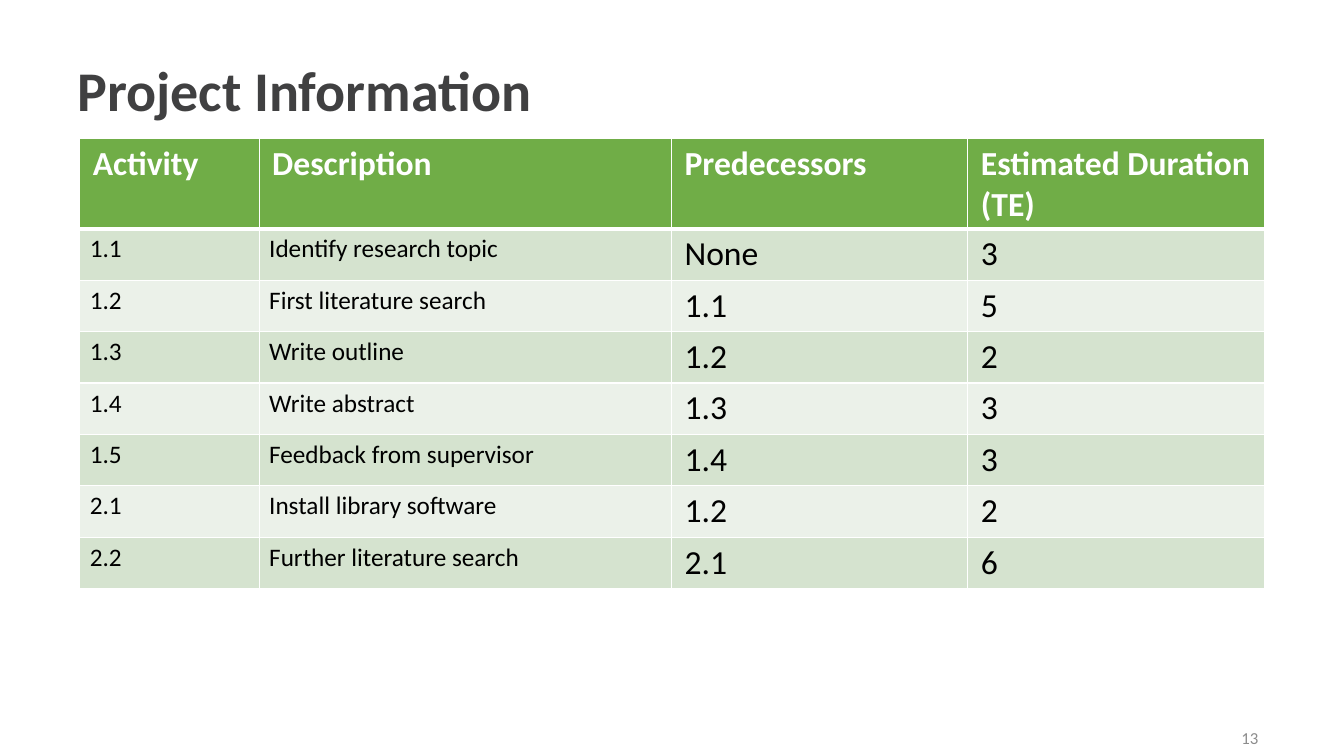
import pptx
import pptx.dml.color
import pptx.enum.text
import pptx.util
from lxml import etree

Inches = pptx.util.Inches
DRAWING = "http://schemas.openxmlformats.org/drawingml/2006/main"

deck = pptx.Presentation()
deck.slide_width, deck.slide_height = Inches(13.33), Inches(7.5)
page = deck.slides.add_slide(deck.slide_layouts[6])


def write(frame, text, size, color, bold=False):
    frame.word_wrap = True
    frame.text = text
    para = frame.paragraphs[0]
    for span in para.runs:
        span.font.name = "Calibri"
        span.font.size = pptx.util.Pt(size)
        span.font.bold = bold
        span.font.color.rgb = pptx.dml.color.RGBColor.from_string(color)
    return para


def add_borders(cell, widths):
    """Draw white borders; widths maps the sides L, R, T, B to points."""
    properties = cell._tc.get_or_add_tcPr()
    for position, side in enumerate("LRTB"):
        line = etree.Element(f"{{{DRAWING}}}ln{side}", w=str(pptx.util.Pt(widths[side])))
        fill = etree.SubElement(line, f"{{{DRAWING}}}solidFill")
        etree.SubElement(fill, f"{{{DRAWING}}}srgbClr", val="FFFFFF")
        properties.insert(position, line)


# Title and page number
title = page.shapes.add_textbox(Inches(0.67), Inches(0.3), Inches(12), Inches(1.25))
para = write(title.text_frame, "Project Information", 40, "404041", True)
para.line_spacing = 0.9
number = page.shapes.add_textbox(Inches(9.58), Inches(7.12), Inches(3), Inches(0.4))
para = write(number.text_frame, "13", 12, "8C8C8C")
para.alignment = pptx.enum.text.PP_ALIGN.RIGHT
for box in (title, number):
    box.text_frame.vertical_anchor = pptx.enum.text.MSO_ANCHOR.MIDDLE

# Activity table
activities = [
    ("Activity", "Description", "Predecessors", "Estimated Duration (TE)"),
    ("1.1", "Identify research topic", "None", "3"),
    ("1.2", "First literature search", "1.1", "5"),
    ("1.3", "Write outline", "1.2", "2"),
    ("1.4", "Write abstract", "1.3", "3"),
    ("1.5", "Feedback from supervisor", "1.4", "3"),
    ("2.1", "Install library software", "1.2", "2"),
    ("2.2", "Further literature search", "2.1", "6"),
]
column_widths = [1.78, 4.09, 2.94, 2.94]
row_heights = [0.88] + [0.51] * (len(activities) - 1)
table = page.shapes.add_table(
    len(activities), len(column_widths), Inches(0.79), Inches(1.37),
    Inches(sum(column_widths)), Inches(sum(row_heights)),
).table
for column, width in zip(table.columns, column_widths):
    column.width = Inches(width)

for r, activity in enumerate(activities):
    table.rows[r].height = Inches(row_heights[r])
    header = r == 0
    band = "70AD47" if header else ("EBF1E9", "D5E3CF")[r % 2]
    borders = {"L": 1, "R": 1, "T": 3 if r == 1 else 1, "B": 3 if header else 1}
    for c, text in enumerate(activity):
        cell = table.cell(r, c)
        large = header or c >= 2
        write(cell.text_frame, text, 24 if large else 18,
              "FFFFFF" if header else "000000", header)
        cell.margin_left = cell.margin_right = Inches(0.13 if large else 0.1)
        cell.margin_top = cell.margin_bottom = Inches(0.05)
        cell.fill.solid()
        cell.fill.fore_color.rgb = pptx.dml.color.RGBColor.from_string(band)
        add_borders(cell, borders)

deck.save("out.pptx")
